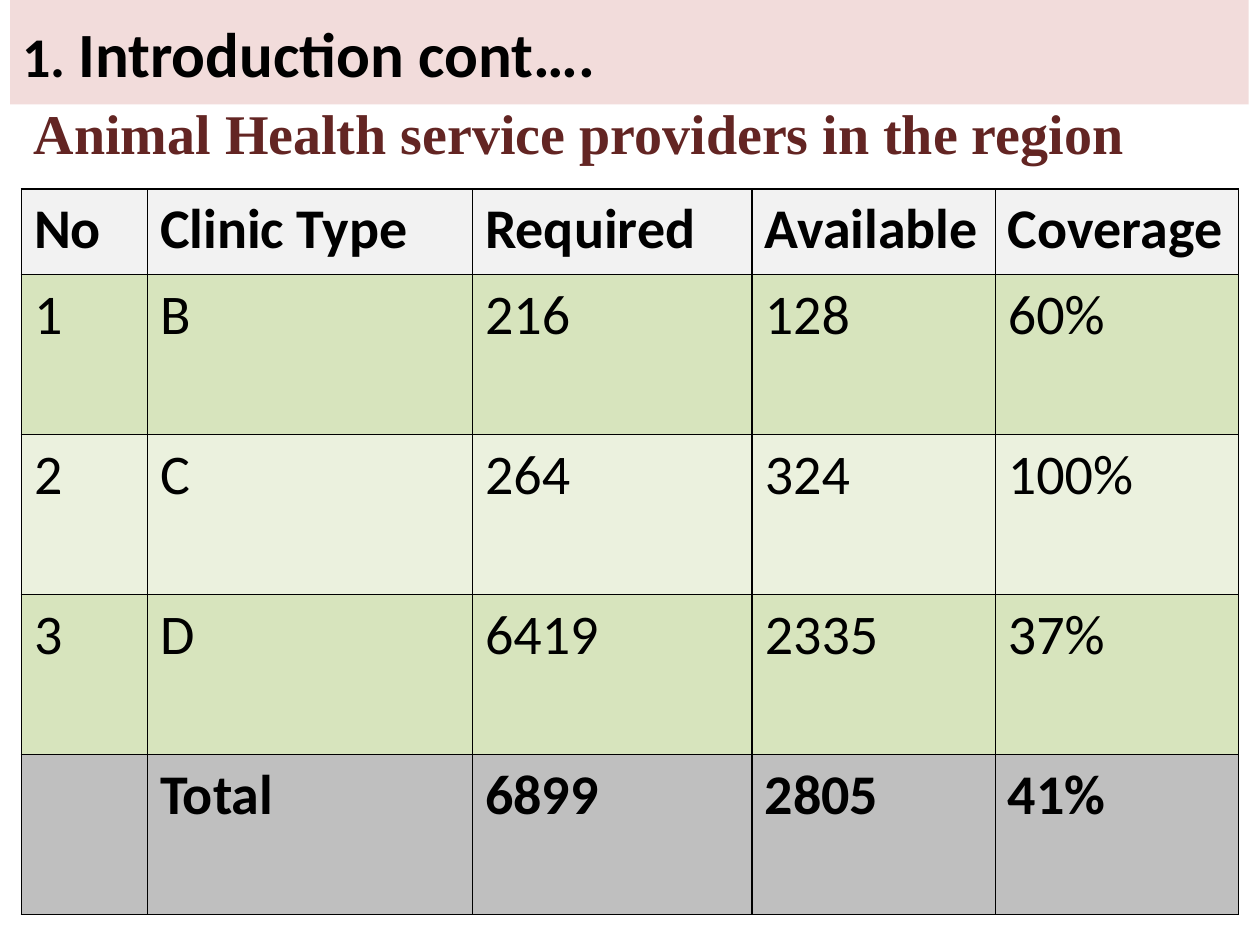
from lxml import etree
from pptx import Presentation
from pptx.dml.color import RGBColor
from pptx.enum.shapes import MSO_SHAPE
from pptx.enum.text import MSO_ANCHOR, PP_ALIGN
from pptx.oxml.ns import qn
from pptx.util import Inches, Pt

RECT = MSO_SHAPE.RECTANGLE
MIDDLE, TOP = MSO_ANCHOR.MIDDLE, MSO_ANCHOR.TOP
LEFT = PP_ALIGN.LEFT

COLORS = {
    "ink": "000000", "title": "F2DCDB", "heading": "632523",
    "head": "F2F2F2", "odd": "D7E4BD", "even": "EBF1DE", "total": "BFBFBF",
}
PLAIN = {"name": "Calibri", "size": Pt(32), "bold": False, "color": "ink"}
BOLD = {**PLAIN, "bold": True}
LARGE = {**BOLD, "size": Pt(36)}
SERIF = {**BOLD, "name": "Times New Roman", "color": "heading"}

TITLE = [("1. ", BOLD), ("Introduction cont….", LARGE)]
HEADING = [("Animal Health service providers in the region", SERIF)]
ROWS = [
    ("head", BOLD, ["No", "Clinic Type", "Required", "Available", "Coverage"]),
    ("odd", PLAIN, ["1", "B", "216", "128", "60%"]),
    ("even", PLAIN, ["2", "C", "264", "324", "100%"]),
    ("odd", PLAIN, ["3", "D", "6419", "2335", "37%"]),
    ("total", BOLD, ["", "Total", "6899", "2805", "41%"]),
]
WIDTHS = [1, 2.58, 2.22, 1.93, 1.93]
HEIGHTS = [0.68] + [1.27] * 4


def rgb(key):
    return RGBColor.from_string(COLORS[key])


def paint(item, key):
    item.fill.solid()
    item.fill.fore_color.rgb = rgb(key)


def style(font, form):
    for key, value in form.items():
        if key == "color":
            font.color.rgb = rgb(value)
        else:
            setattr(font, key, value)


def write(frame, runs, anchor):
    frame.word_wrap = True
    frame.vertical_anchor = anchor
    par = frame.paragraphs[0]
    par.alignment = LEFT
    for text, form in runs:
        run = par.add_run()
        run.text = text
        style(run.font, form)


def border(cell):
    """Draw a thin line on all four sides of a cell."""
    props = cell._tc.get_or_add_tcPr()
    for spot, side in enumerate(("a:lnL", "a:lnR", "a:lnT", "a:lnB")):
        line = etree.Element(qn(side), w=str(Pt(1)))
        fill = etree.SubElement(line, qn("a:solidFill"))
        etree.SubElement(fill, qn("a:srgbClr"), val=COLORS["ink"])
        props.insert(spot, line)


deck = Presentation()
deck.slide_width, deck.slide_height = Inches(10), Inches(7.5)
slide = deck.slides.add_slide(deck.slide_layouts[6])
shapes = slide.shapes

band = shapes.add_shape(RECT, Inches(0.08), 0, Inches(9.83), Inches(0.83))
band.shadow.inherit = False
band.line.fill.background()
paint(band, "title")
write(band.text_frame, TITLE, MIDDLE)

table = shapes.add_table(
    len(ROWS), len(WIDTHS), Inches(0.17), Inches(1.5),
    Inches(sum(WIDTHS)), Inches(sum(HEIGHTS))).table
for col, width in zip(table.columns, WIDTHS):
    col.width = Inches(width)
for row, height, (fill, form, words) in zip(table.rows, HEIGHTS, ROWS):
    row.height = Inches(height)
    for cell, word in zip(row.cells, words):
        paint(cell, fill)
        border(cell)
        if word:
            write(cell.text_frame, [(word, form)], TOP)

label = shapes.add_textbox(
    Inches(0.17), Inches(0.73), Inches(9.67), Inches(0.64))
write(label.text_frame, HEADING, TOP)

deck.save("out.pptx")
